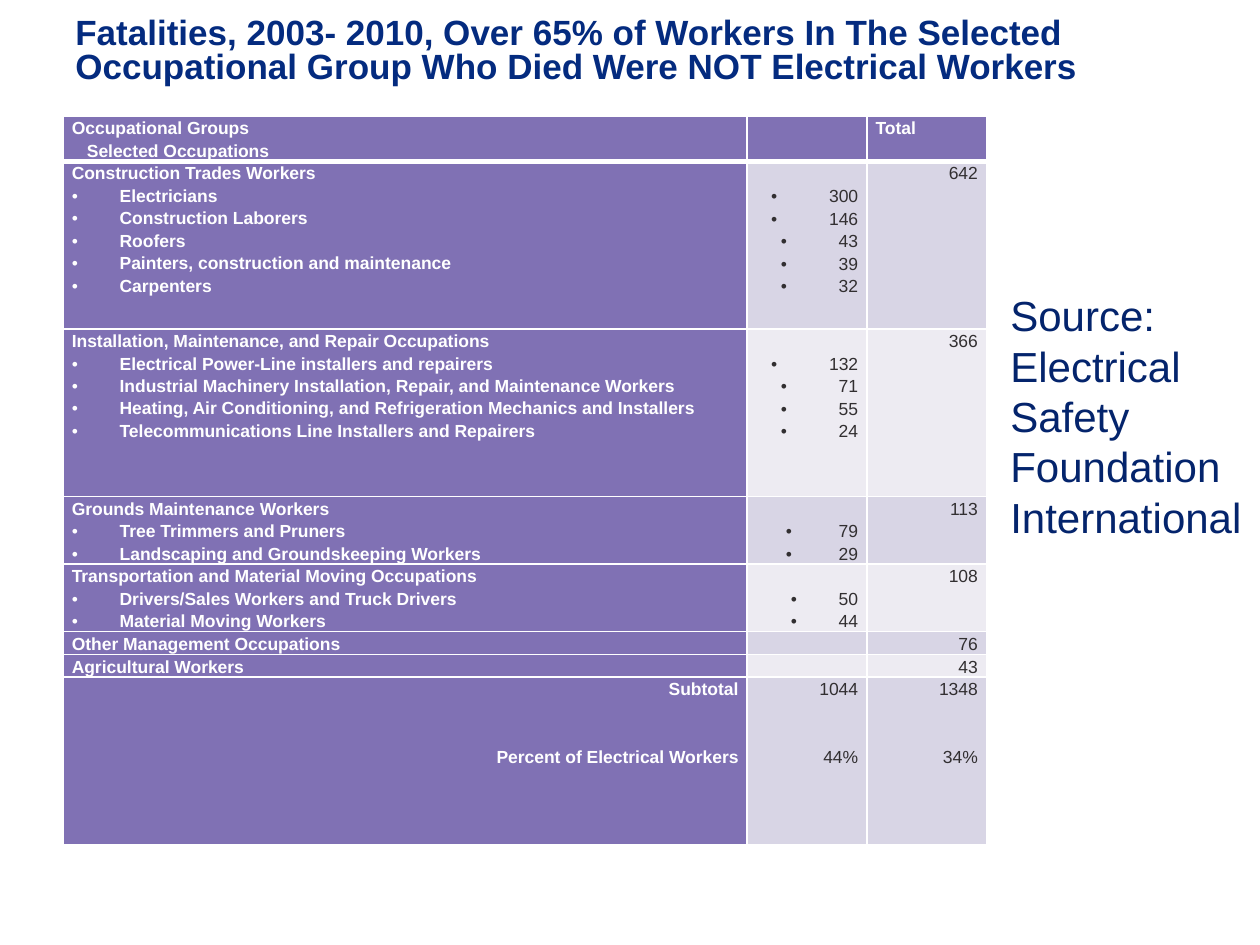
import pptx
import pptx.util
import pptx.dml.color
import pptx.enum.text
import pptx.oxml.ns
from lxml import etree
from dataclasses import dataclass

Inches = pptx.util.Inches
Pt = pptx.util.Pt
ALIGN = pptx.enum.text.PP_ALIGN
ANCHOR = pptx.enum.text.MSO_ANCHOR


@dataclass(frozen=True)
class Theme:
    font: str = "Arial"
    title: str = "042B7F"
    source: str = "04246C"
    head: str = "8071B4"
    odd: str = "D8D5E5"
    even: str = "EDEBF2"
    white: str = "FFFFFF"
    ink: str = "322F31"
    title_size: int = 20
    source_size: int = 24
    table_size: int = 10


THEME = Theme()
TITLE = ("Fatalities, 2003- 2010, Over 65% of Workers In The Selected "
         "Occupational Group Who Died Were NOT Electrical Workers")
SOURCE = "Source: Electrical Safety Foundation International"
HEADER = ("Occupational Groups", "Selected Occupations", "Total")
GROUPS = [
    ("Construction Trades Workers", "642", 1.33, 0.46, [
        ("Electricians", "300"),
        ("Construction Laborers", "146"),
        ("Roofers", "43"),
        ("Painters, construction and maintenance", "39"),
        ("Carpenters", "32")]),
    ("Installation, Maintenance, and Repair Occupations", "366", 1.33, 0.46, [
        ("Electrical Power-Line installers and repairers", "132"),
        ("Industrial Machinery Installation, Repair, and Maintenance Workers", "71"),
        ("Heating, Air Conditioning, and Refrigeration Mechanics and Installers", "55"),
        ("Telecommunications Line Installers and Repairers", "24")]),
    ("Grounds Maintenance Workers", "113", 0.53, 0.42, [
        ("Tree Trimmers and Pruners", "79"),
        ("Landscaping and Groundskeeping Workers", "29")]),
    ("Transportation and Material Moving Occupations", "108", 0.53, 0.38, [
        ("Drivers/Sales Workers and Truck Drivers", "50"),
        ("Material Moving Workers", "44")]),
    ("Other Management Occupations", "76", 0.18, 0.38, []),
    ("Agricultural Workers", "43", 0.18, 0.38, []),
]
SUMMARY = [("Subtotal", "Percent of Electrical Workers"), ("1044", "44%"), ("1348", "34%")]
COLUMNS = (5.43, 0.95, 0.95)
HEADER_HEIGHT, SUMMARY_HEIGHT = 0.36, 1.33
LINE_HEIGHT, HANG, SUMMARY_GAP = 0.18, 0.38, 25.7


def color(value):
    return pptx.dml.color.RGBColor.from_string(value)


def child(parent, tag, **attributes):
    return etree.SubElement(parent, pptx.oxml.ns.qn(tag), **attributes)


def style(para, size, ink, bold=False):
    for span in para.runs:
        span.font.name = THEME.font
        span.font.size = Pt(size)
        span.font.bold = bold
        span.font.color.rgb = color(ink)


def indent(para, left, hang=0.0):
    props = para._p.get_or_add_pPr()
    props.set("marL", str(Inches(left)))
    props.set("indent", str(Inches(-hang)))
    if hang:
        child(props, "a:buFont", typeface=THEME.font)
        child(props, "a:buChar", char="•")


def set_borders(cell, row):
    props = cell._tc.get_or_add_tcPr()
    widths = {"L": 1, "R": 1, "T": 3 if row == 1 else 1, "B": 3 if row == 0 else 1}
    for position, (side, width) in enumerate(widths.items()):
        line = child(props, f"a:ln{side}", w=str(Pt(width)))
        fill = child(line, "a:solidFill")
        child(fill, "a:srgbClr", val=THEME.white)
        props.insert(position, line)


def fill_cell(table, row, column, lines, right=False):
    cell = table.cell(row, column)
    header = row == 0 or column == 0
    cell.margin_left = cell.margin_right = Inches(0.07)
    cell.margin_top = cell.margin_bottom = 0
    cell.fill.solid()
    cell.fill.fore_color.rgb = color(
        THEME.head if header else THEME.odd if row % 2 else THEME.even)
    set_borders(cell, row)
    cell.text_frame.text = "\n".join(lines)
    for para in cell.text_frame.paragraphs:
        para.line_spacing = 1.15
        para.alignment = ALIGN.RIGHT if right else ALIGN.LEFT
        style(para, THEME.table_size, THEME.white if header else THEME.ink, header)
        if not para.runs:
            child(para._p, "a:endParaRPr", sz=str(THEME.table_size * 100))
    return cell


def add_table(page):
    heights = [HEADER_HEIGHT, *(group[2] for group in GROUPS), SUMMARY_HEIGHT]
    table = page.shapes.add_table(
        len(heights), len(COLUMNS), Inches(0.5), Inches(0.92),
        Inches(sum(COLUMNS)), Inches(sum(heights))).table
    for column, width in zip(table.columns, COLUMNS):
        column.width = Inches(width)
    for row, height in zip(table.rows, heights):
        row.height = Inches(height)

    heading = fill_cell(table, 0, 0, HEADER[:2])
    indent(heading.text_frame.paragraphs[1], 0.12)
    fill_cell(table, 0, 1, [])
    fill_cell(table, 0, 2, HEADER[2:])

    for row, (name, total, _, hang, jobs) in enumerate(GROUPS, 1):
        names = fill_cell(table, row, 0, [name, *(job for job, _ in jobs)])
        for para in names.text_frame.paragraphs[1:]:
            indent(para, HANG, HANG)
        counts = fill_cell(table, row, 1, [count for _, count in jobs], True)
        if jobs:
            counts.margin_top = Inches(LINE_HEIGHT)
            for para in counts.text_frame.paragraphs:
                indent(para, hang, hang)
        fill_cell(table, row, 2, [total], True)

    for column, lines in enumerate(SUMMARY):
        cell = fill_cell(table, len(heights) - 1, column, lines, True)
        cell.text_frame.paragraphs[1].space_before = Pt(SUMMARY_GAP)


def add_text(page, place, text, size, ink, bold=False, anchor=ANCHOR.TOP, spacing=1.0):
    box = page.shapes.add_textbox(*(Inches(value) for value in place))
    frame = box.text_frame
    frame.word_wrap = True
    frame.vertical_anchor = anchor
    frame.text = text
    para = frame.paragraphs[0]
    para.line_spacing = spacing
    style(para, size, ink, bold)


def main():
    deck = pptx.Presentation()
    deck.slide_width, deck.slide_height = Inches(10), Inches(7.5)
    page = deck.slides.add_slide(deck.slide_layouts[6])
    add_table(page)
    add_text(page, (0.5, 0, 9, 0.83), TITLE, THEME.title_size, THEME.title,
             True, ANCHOR.MIDDLE, 0.8)
    add_text(page, (7.92, 2.25, 2.08, 2.12), SOURCE, THEME.source_size, THEME.source)
    deck.save("out.pptx")


if __name__ == "__main__":
    main()
